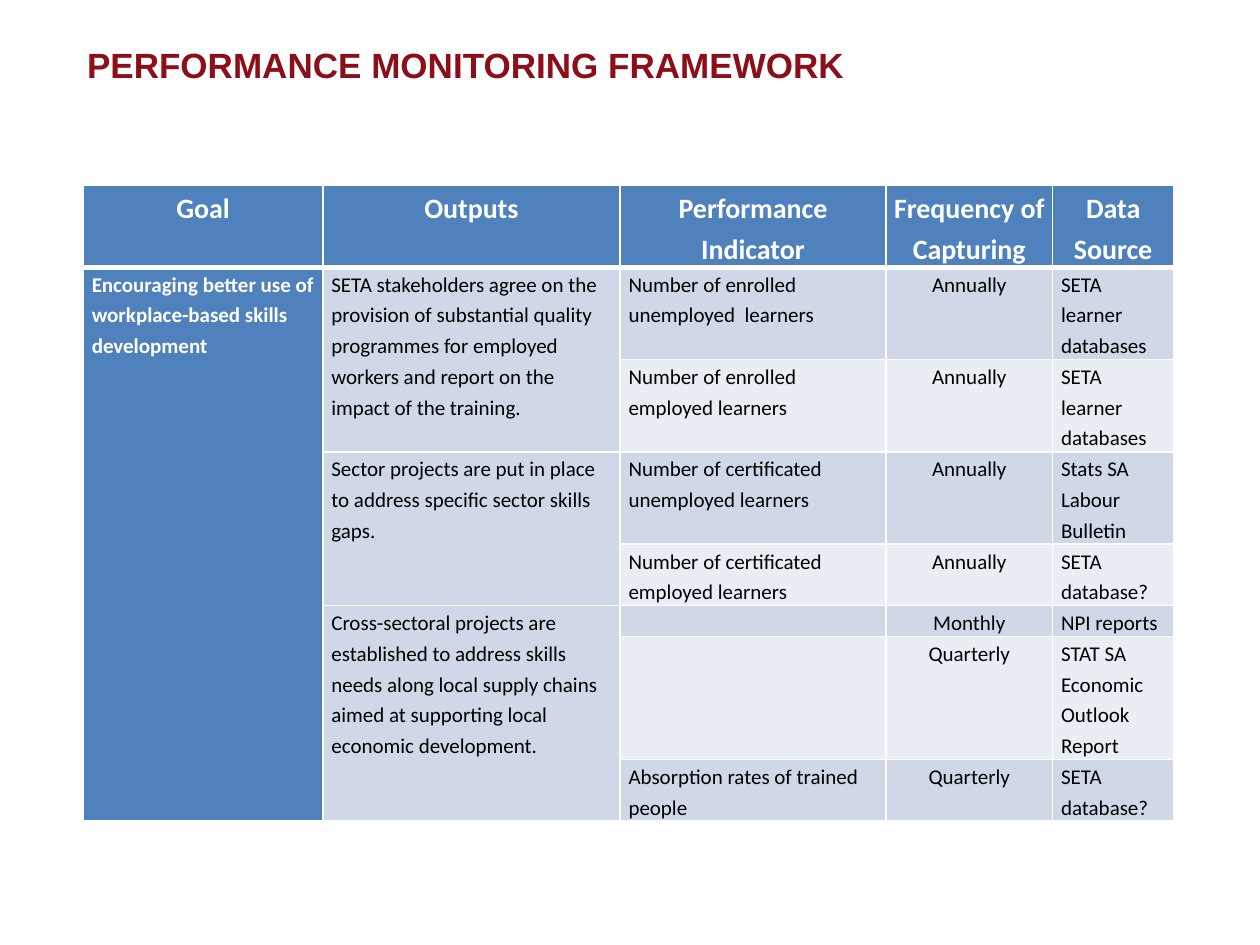
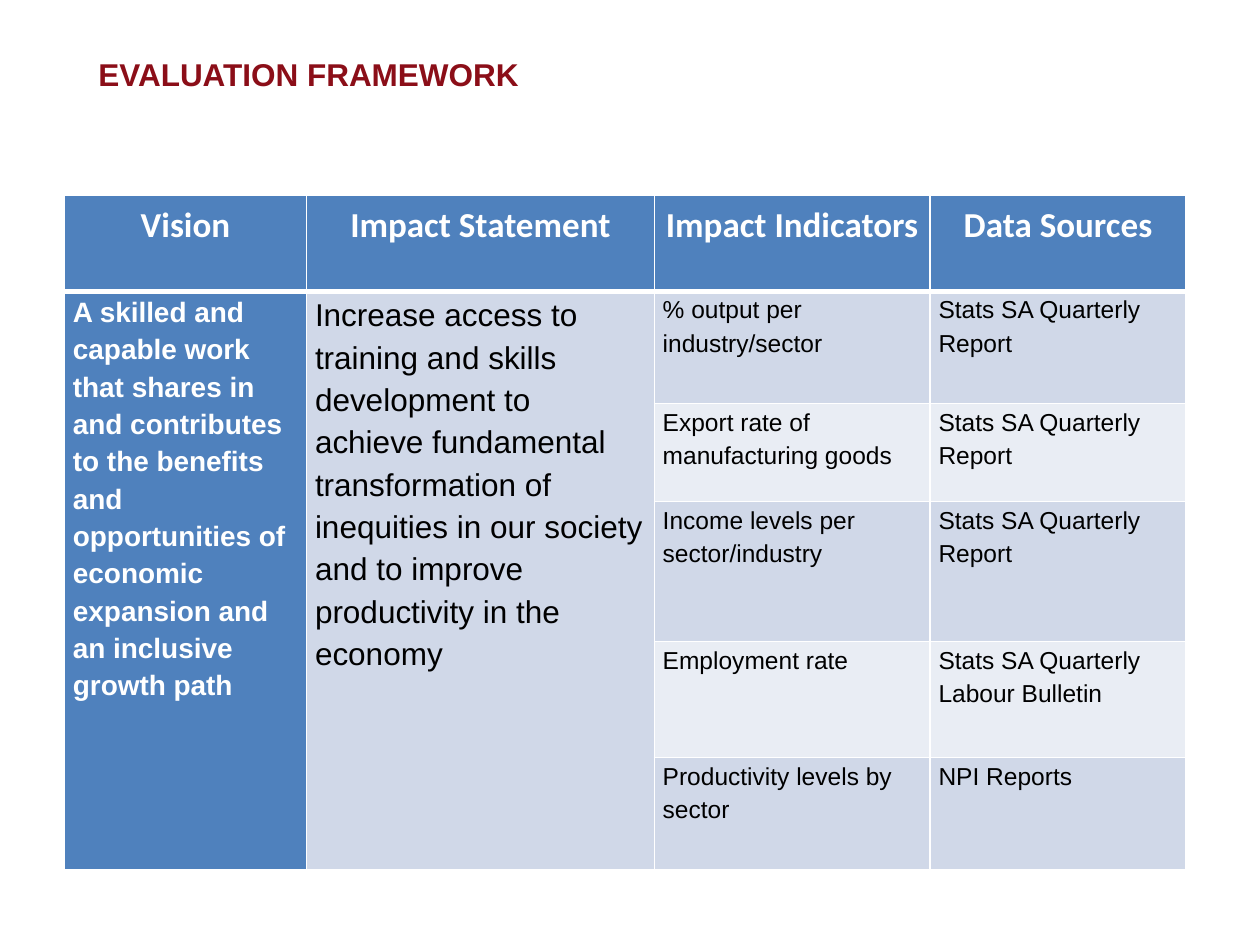
"""Build the monitoring and evaluation framework slides."""
from lxml.etree import SubElement
from pptx import Presentation
from pptx.dml.color import RGBColor
from pptx.enum.text import MSO_ANCHOR, PP_ALIGN
from pptx.oxml.ns import qn
from pptx.util import Cm, Pt

MAROON, BLUE, WHITE, BLACK = "8B0E18", "4F81BD", "FFFFFF", "000000"
BANDS = "D0D8E8", "E9EDF4"
LINE_HEIGHT = 0.62

FRAMEWORKS = [
    dict(
        title="PERFORMANCE MONITORING FRAMEWORK", title_size=20, title_at=(1.5, 0.74),
        table_at=(1.68, 3.73), header_size=16, body_font="Calibri",
        headers=["Goal", "Outputs", "Performance Indicator", "Frequency of Capturing", "Data Source"],
        widths=[4.83, 5.99, 5.36, 3.36, 2.44],
        sizes=[12] * 5, centred=[3],
        heights=[1.65] + [n * LINE_HEIGHT for n in (3, 3, 3, 2, 1, 4, 2)],
        rows=[
            ("Encouraging better use of workplace-based skills development",
             "SETA stakeholders agree on the provision of substantial quality programmes "
             "for employed workers and report on the impact of the training.",
             "Number of enrolled unemployed  learners", "Annually", "SETA learner databases"),
            (None, None, "Number of enrolled employed learners", "Annually", "SETA learner databases"),
            (None, "Sector projects are put in place to address specific sector skills gaps.",
             "Number of certificated unemployed learners", "Annually", "Stats SA Labour Bulletin"),
            (None, None, "Number of certificated employed learners", "Annually", "SETA database?"),
            (None, "Cross-sectoral projects are established to address skills needs along local "
             "supply chains aimed at supporting local economic development.",
             "", "Monthly", "NPI reports"),
            (None, None, "", "Quarterly", "STAT SA Economic Outlook Report"),
            (None, None, "Absorption rates of trained people", "Quarterly", "SETA database?"),
        ],
    ),
    dict(
        title="EVALUATION FRAMEWORK", title_size=18, title_at=(1.73, 0.92),
        table_at=(1.3, 3.94), header_size=20, body_font="Arial",
        headers=["Vision", "Impact Statement", "Impact Indicators", "Data Sources"],
        widths=[4.88, 7.01, 5.56, 5.16],
        sizes=[16, 18, 14, 14], centred=[],
        heights=[1.93, 2.26, 1.98, 2.82, 2.34, 2.26],
        rows=[
            ("A skilled and capable work that shares in and contributes to the benefits and "
             "opportunities of economic expansion and an inclusive growth path",
             "Increase access to training and skills development to achieve fundamental "
             "transformation of inequities in our society and to improve productivity in the economy",
             "% output per industry/sector", "Stats SA Quarterly Report"),
            (None, None, "Export rate of manufacturing goods", "Stats SA Quarterly Report"),
            (None, None, "Income levels per sector/industry", "Stats SA Quarterly Report"),
            (None, None, "Employment rate", "Stats SA Quarterly Labour Bulletin"),
            (None, None, "Productivity levels by sector", "NPI Reports"),
        ],
    ),
]


def rgb(value):
    return RGBColor.from_string(value)


def style_runs(p, font, size, color, bold):
    for r in p.runs:
        r.font.name, r.font.size, r.font.bold = font, Pt(size), bold
        r.font.color.rgb = rgb(color)


def add_title(s, text, size, at):
    title = s.shapes.title
    title.left, title.top = map(Cm, at)
    title.width, title.height = Cm(16.76), Cm(1.14)
    tf = title.text_frame
    tf.text = text
    tf.vertical_anchor = MSO_ANCHOR.MIDDLE
    tf.paragraphs[0].alignment = PP_ALIGN.LEFT
    style_runs(tf.paragraphs[0], "Arial", size, MAROON, True)


def set_borders(cell, top, bottom):
    tc_pr = cell._tc.get_or_add_tcPr()
    for side, width in (("L", 1), ("R", 1), ("T", top), ("B", bottom)):
        ln = SubElement(tc_pr, qn(f"a:ln{side}"), w=str(Pt(width)))
        SubElement(SubElement(ln, qn("a:solidFill")), qn("a:srgbClr"), val=WHITE)


def fill_cell(cell, text, fill, font, size, color, bold, align, margin):
    cell.margin_left = cell.margin_right = Cm(margin)
    cell.margin_top = cell.margin_bottom = 0
    cell.fill.solid()
    cell.fill.fore_color.rgb = rgb(fill)
    p = cell.text_frame.paragraphs[0]
    p.text = text or ""
    p.alignment, p.line_spacing = align, 1.2
    style_runs(p, font, size, color, bold)
    if not text:
        end = SubElement(p._p, qn("a:endParaRPr"), sz=str(size * 100))
        SubElement(end, qn("a:latin"), typeface=font)


def add_framework_table(s, fw):
    rows = [fw["headers"], *fw["rows"]]
    widths, heights = fw["widths"], fw["heights"]
    left, top = map(Cm, fw["table_at"])
    table = s.shapes.add_table(len(rows), len(widths), left, top,
                               Cm(sum(widths)), Cm(sum(heights))).table
    for column, width in zip(table.columns, widths):
        column.width = Cm(width)
    for row, height in zip(table.rows, heights):
        row.height = Cm(height)

    for i, texts in enumerate(rows):
        for j, text in enumerate(texts):
            cell = table.cell(i, j)
            set_borders(cell, 3 if i == 1 else 1, 3 if i == 0 else 1)
            if i == 0:
                fill_cell(cell, text, BLUE, "Calibri", fw["header_size"], WHITE, True,
                          PP_ALIGN.CENTER, 0.14)
                continue
            lead = j == 0
            band = BANDS[0] if j == 1 else BANDS[(i - 1) % 2]
            fill_cell(cell, text, BLUE if lead else band, fw["body_font"], fw["sizes"][j],
                      WHITE if lead else BLACK, lead,
                      PP_ALIGN.CENTER if j in fw["centred"] else PP_ALIGN.LEFT, 0.17)

    for j in range(len(widths)):
        starts = [i for i, texts in enumerate(rows) if texts[j] is not None]
        for first, following in zip(starts, starts[1:] + [len(rows)]):
            if following - first > 1:
                table.cell(first, j).merge(table.cell(following - 1, j))


def main():
    prs = Presentation()
    prs.slide_width, prs.slide_height = Cm(25.4), Cm(19.05)
    for fw in FRAMEWORKS:
        s = prs.slides.add_slide(prs.slide_layouts[5])
        add_title(s, fw["title"], fw["title_size"], fw["title_at"])
        add_framework_table(s, fw)
    prs.save("out.pptx")


if __name__ == "__main__":
    main()
